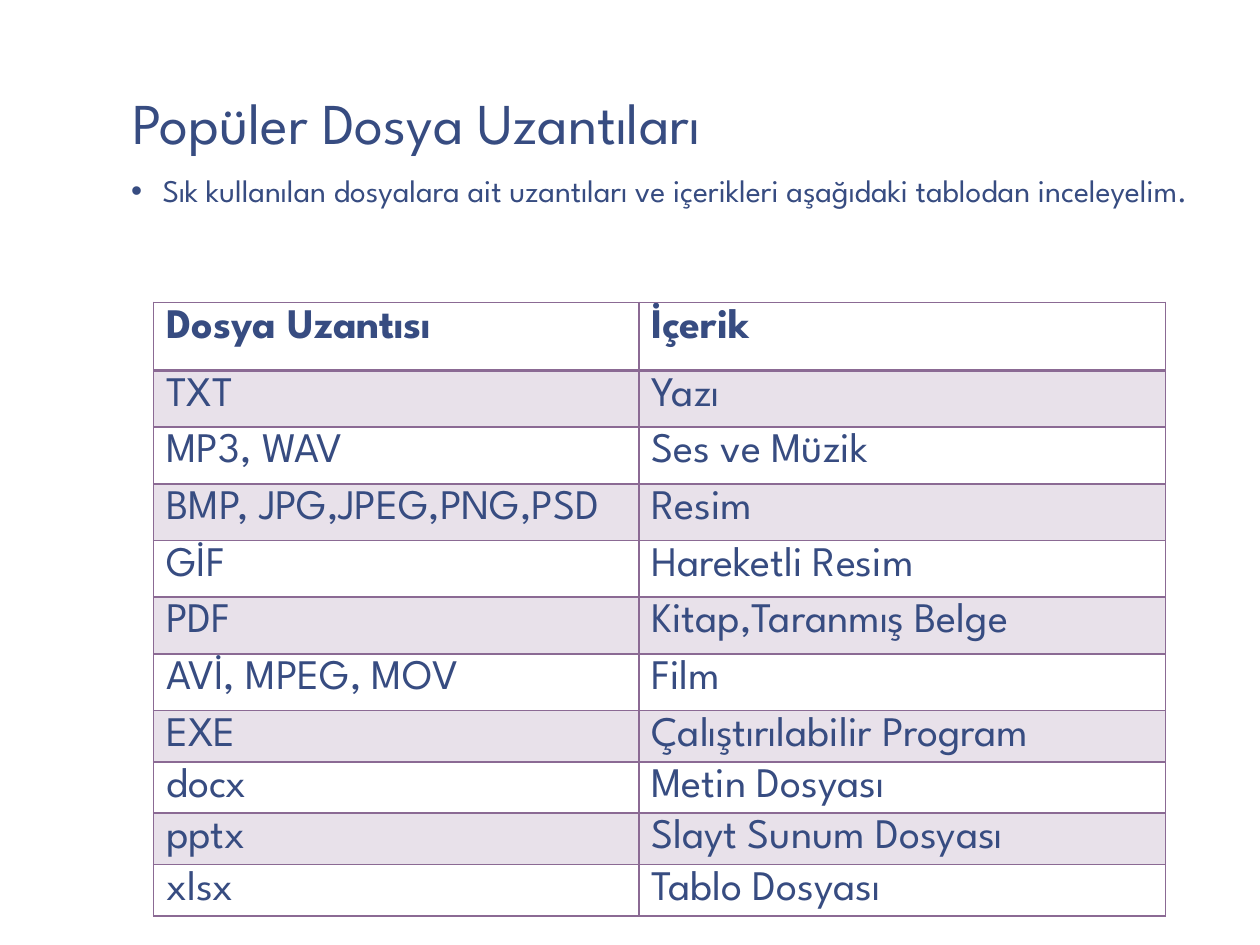
import pptx
import pptx.util
import pptx.dml.color
import pptx.enum.text
import pptx.oxml
import pptx.oxml.ns
from pptx.util import Inches

NAVY = pptx.dml.color.RGBColor(0x37, 0x4C, 0x81)
PURPLE = pptx.dml.color.RGBColor(0x8B, 0x6A, 0x94)
LILAC = pptx.dml.color.RGBColor(0xE8, 0xE1, 0xEA)
FONT = "League Spartan"
NS = pptx.oxml.ns.nsdecls("a")


def style(p, size, bold=False):
    for r in p.runs:
        r.font.name = FONT
        r.font.size = pptx.util.Pt(size)
        r.font.bold = bold
        r.font.color.rgb = NAVY


def set_frame(tf):
    tf.word_wrap = True
    tf.auto_size = pptx.enum.text.MSO_AUTO_SIZE.NONE
    tf.margin_left = tf.margin_right = Inches(0.13)
    tf.margin_top = tf.margin_bottom = Inches(0.07)


prs = pptx.Presentation()
prs.slide_width, prs.slide_height = Inches(10), Inches(7.5)
s = prs.slides.add_slide(prs.slide_layouts[5])

title = s.shapes.title
title.left, title.top = Inches(0.92), Inches(0.08)
title.width, title.height = Inches(8.33), Inches(1.23)
tf = title.text_frame
set_frame(tf)
tf.vertical_anchor = pptx.enum.text.MSO_ANCHOR.BOTTOM
tf.text = "Popüler Dosya Uzantıları"
p = tf.paragraphs[0]
p.alignment = pptx.enum.text.PP_ALIGN.LEFT
p.line_spacing = 0.85
style(p, 33)

intro = s.shapes.add_textbox(Inches(0.91), Inches(1.31), Inches(8.81), Inches(1.02))
tf = intro.text_frame
set_frame(tf)
tf.text = "Sık kullanılan dosyalara ait uzantıları ve içerikleri aşağıdaki tablodan inceleyelim."
p = tf.paragraphs[0]
p.line_spacing = 0.95
pPr = p._p.get_or_add_pPr()
pPr.set("marL", str(Inches(0.25)))
pPr.set("indent", str(-Inches(0.25)))
pPr.append(pptx.oxml.parse_xml(f'<a:buFont {NS} typeface="Arial"/>'))
pPr.append(pptx.oxml.parse_xml(f'<a:buChar {NS} char="•"/>'))
style(p, 18)

rows = [
    ("Dosya Uzantısı", "İçerik"),
    ("TXT", "Yazı"),
    ("MP3, WAV", "Ses ve Müzik"),
    ("BMP, JPG,JPEG,PNG,PSD", "Resim"),
    ("GİF", "Hareketli Resim"),
    ("PDF", "Kitap,Taranmış Belge"),
    ("AVİ, MPEG, MOV", "Film"),
    ("EXE", "Çalıştırılabilir Program"),
    ("docx", "Metin Dosyası"),
    ("pptx", "Slayt Sunum Dosyası"),
    ("xlsx", "Tablo Dosyası"),
]
heights = [0.54] + [0.45] * 6 + [0.4] * 4
table = s.shapes.add_table(len(rows), 2, Inches(1.22), Inches(2.4),
                           Inches(8.03), Inches(sum(heights))).table
table.first_row = True
table.horz_banding = False
for column, width in zip(table.columns, (3.85, 4.18)):
    column.width = Inches(width)

for i, (texts, height) in enumerate(zip(rows, heights)):
    table.rows[i].height = Inches(height)
    for j, text in enumerate(texts):
        cell = table.cell(i, j)
        cell.text = text
        style(cell.text_frame.paragraphs[0], 24, bold=i == 0)
        if i % 2:
            cell.fill.solid()
            cell.fill.fore_color.rgb = LILAC
        else:
            cell.fill.background()
        tcPr = cell._tc.get_or_add_tcPr()
        for k, side in enumerate("LRTB"):
            heavy = (i, side) in ((0, "B"), (1, "T"))
            width = pptx.util.Pt(2 if heavy else 1)
            tcPr.insert(k, pptx.oxml.parse_xml(
                f'<a:ln{side} {NS} w="{width}"><a:solidFill>'
                f'<a:srgbClr val="{PURPLE}"/></a:solidFill></a:ln{side}>'))

prs.save("out.pptx")
